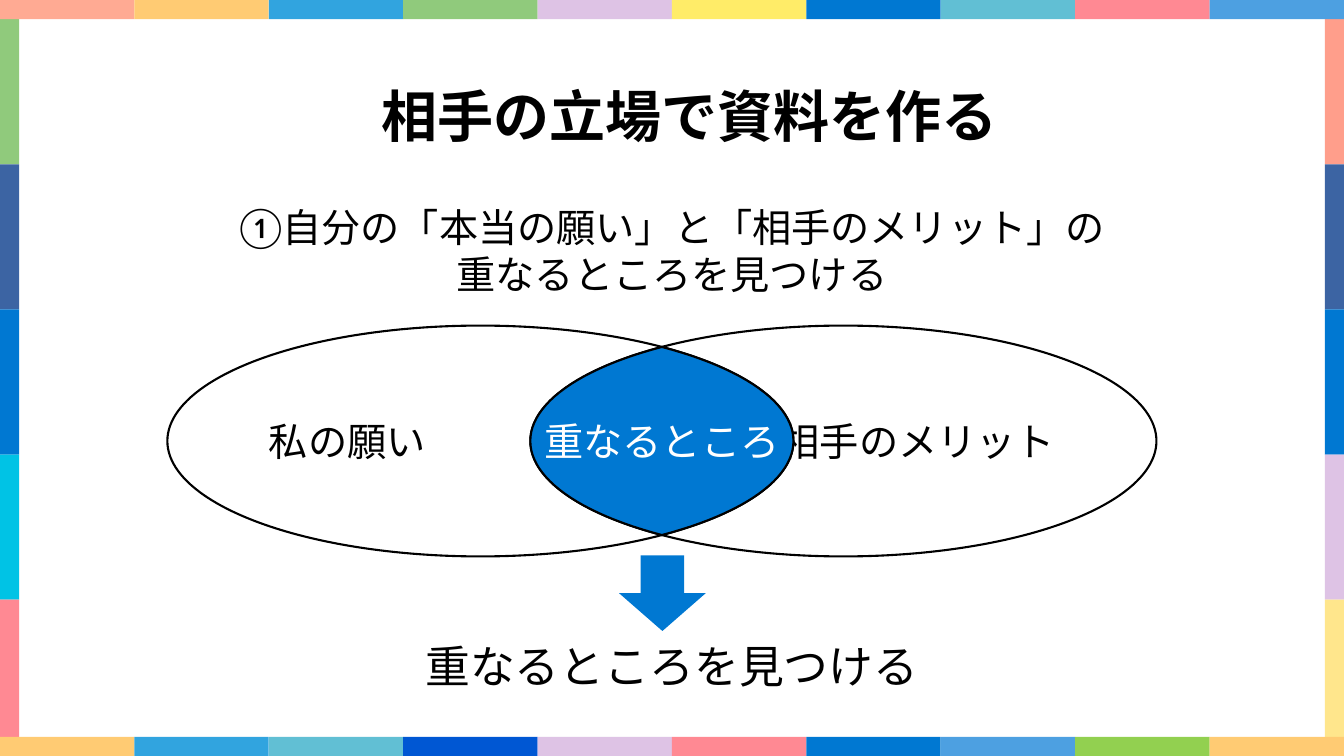
"""Build a slide on finding where my wish and the other side's benefit overlap."""
from math import acos, cos, pi, sin

from lxml.etree import SubElement
from pptx import Presentation
from pptx.dml.color import RGBColor
from pptx.enum.shapes import MSO_SHAPE
from pptx.enum.text import MSO_ANCHOR, MSO_AUTO_SIZE, PP_ALIGN
from pptx.oxml.ns import qn
from pptx.util import Inches, Pt

WIDTH, HEIGHT = 13.33, 7.5
BLUE, BLACK, WHITE = "0078D2", "000000", "FFFFFF"
BODY_FONT, TITLE_FONT = "Lato", "Noto Sans CJK JP"

TITLE = "相手の立場で資料を作る"
LEAD = ["①自分の「本当の願い」と「相手のメリット」の", "重なるところを見つける"]
CONCLUSION = ["重なるところを見つける"]
OVERLAP = "重なるところ"
WISHES = [
    ("私の願い", 1.66, PP_ALIGN.LEFT),
    ("相手のメリット", 5.26, PP_ALIGN.RIGHT),
]
TOP_TILES = ["FFAA93", "FFCB73", "31A4DF", "90CA7C", "DEC3E5",
             "FFEC68", "0078D2", "61BFD4", "FF8993", "4DA0E1"]
BOTTOM_TILES = ["FFCB73", "31A4DF", "61BFD4", "0057D3", "DEC3E5",
                "FF8993", "0078D2", "4DA0E1", "92D050", "FFCB73"]
LEFT_TILES = ["90CA7C", "3C64A3", "0078D2", "00C3E5", "FF8993"]
RIGHT_TILES = ["FF9E8B", "3C64A3", "0078D2", "DEC3E5", "FFE68C"]

BORDER = 0.19
TILE_WIDTH = WIDTH / len(TOP_TILES)
TILE_HEIGHT = 1.44
OVAL_TOP, OVAL_WIDTH, OVAL_HEIGHT = 3.23, 6.21, 2.29
ARC_STEPS = 48


def color(value):
    return RGBColor.from_string(value)


def paint(shape, fill, line=None):
    shape.shadow.inherit = False
    shape.fill.solid()
    shape.fill.fore_color.rgb = color(fill)
    if line:
        shape.line.color.rgb = color(line)
        shape.line.width = Pt(1.5)
    else:
        shape.line.fill.background()


def write(frame, lines, size, ink=BLACK, align=PP_ALIGN.CENTER, face=BODY_FONT, bold=False):
    frame.word_wrap = True
    frame.auto_size = MSO_AUTO_SIZE.NONE
    frame.vertical_anchor = MSO_ANCHOR.MIDDLE
    frame.text = "\n".join(lines)
    for paragraph in frame.paragraphs:
        paragraph.alignment = align
        font = paragraph.font
        font.size, font.bold, font.name = Pt(size), bold, face
        font.color.rgb = color(ink)
        defaults = paragraph._p.pPr.find(qn("a:defRPr"))
        SubElement(defaults, qn("a:ea")).set("typeface", face)


def add_preset(slide, preset, left, top, width, height, fill, line=None):
    shape = slide.shapes.add_shape(
        preset, Inches(left), Inches(top), Inches(width), Inches(height))
    paint(shape, fill, line)
    return shape


def add_border(slide):
    for left, tiles in ((0, LEFT_TILES), (WIDTH - BORDER, RIGHT_TILES)):
        for row, fill in enumerate(tiles):
            add_preset(slide, MSO_SHAPE.RECTANGLE, left, BORDER + row * TILE_HEIGHT,
                       BORDER, TILE_HEIGHT, fill)
    for top, tiles in ((0, TOP_TILES), (HEIGHT - BORDER, BOTTOM_TILES)):
        for column, fill in enumerate(tiles):
            add_preset(slide, MSO_SHAPE.RECTANGLE, column * TILE_WIDTH, top,
                       TILE_WIDTH, BORDER, fill)


def add_statement(slide, lines, top, size):
    box = slide.shapes.add_textbox(Inches(2.23), Inches(top), Inches(8.87), Inches(1.33))
    box.text_frame.margin_top = Inches(0.12)
    write(box.text_frame, lines, size)


def add_overlap(slide):
    radius_x, radius_y = OVAL_WIDTH / 2, OVAL_HEIGHT / 2
    left_center, right_center = (left + radius_x for _, left, _ in WISHES)
    half_angle = acos((right_center - left_center) / 2 / radius_x)
    points = []
    for center, middle in ((left_center, 0), (right_center, pi)):
        for step in range(ARC_STEPS + 1):
            angle = middle + half_angle * (2 * step / ARC_STEPS - 1)
            points.append((Inches(center + radius_x * cos(angle)),
                           Inches(OVAL_TOP + radius_y + radius_y * sin(angle))))
    builder = slide.shapes.build_freeform(*points[0])
    builder.add_line_segments(points[1:], close=True)
    lens = builder.convert_to_shape()
    paint(lens, BLUE, BLACK)
    write(lens.text_frame, [OVERLAP], 28, WHITE)


def main():
    deck = Presentation()
    deck.slide_width, deck.slide_height = Inches(WIDTH), Inches(HEIGHT)
    slide = deck.slides.add_slide(deck.slide_layouts[5])
    add_border(slide)

    title = slide.shapes.title
    title.left, title.top = Inches(2.02), Inches(0.76)
    title.width, title.height = Inches(9.64), Inches(0.77)
    write(title.text_frame, [TITLE], 40, face=TITLE_FONT, bold=True)

    for label, left, align in WISHES:
        oval = add_preset(slide, MSO_SHAPE.OVAL, left, OVAL_TOP,
                          OVAL_WIDTH, OVAL_HEIGHT, WHITE, BLACK)
        oval.fill.background()
        write(oval.text_frame, [label], 28, align=align)
    add_statement(slide, CONCLUSION, 5.9, 32)
    add_overlap(slide)
    add_preset(slide, MSO_SHAPE.DOWN_ARROW, 6.14, 5.51, 0.86, 0.75, BLUE)
    add_statement(slide, LEAD, 1.78, 28)
    deck.save("out.pptx")


if __name__ == "__main__":
    main()
